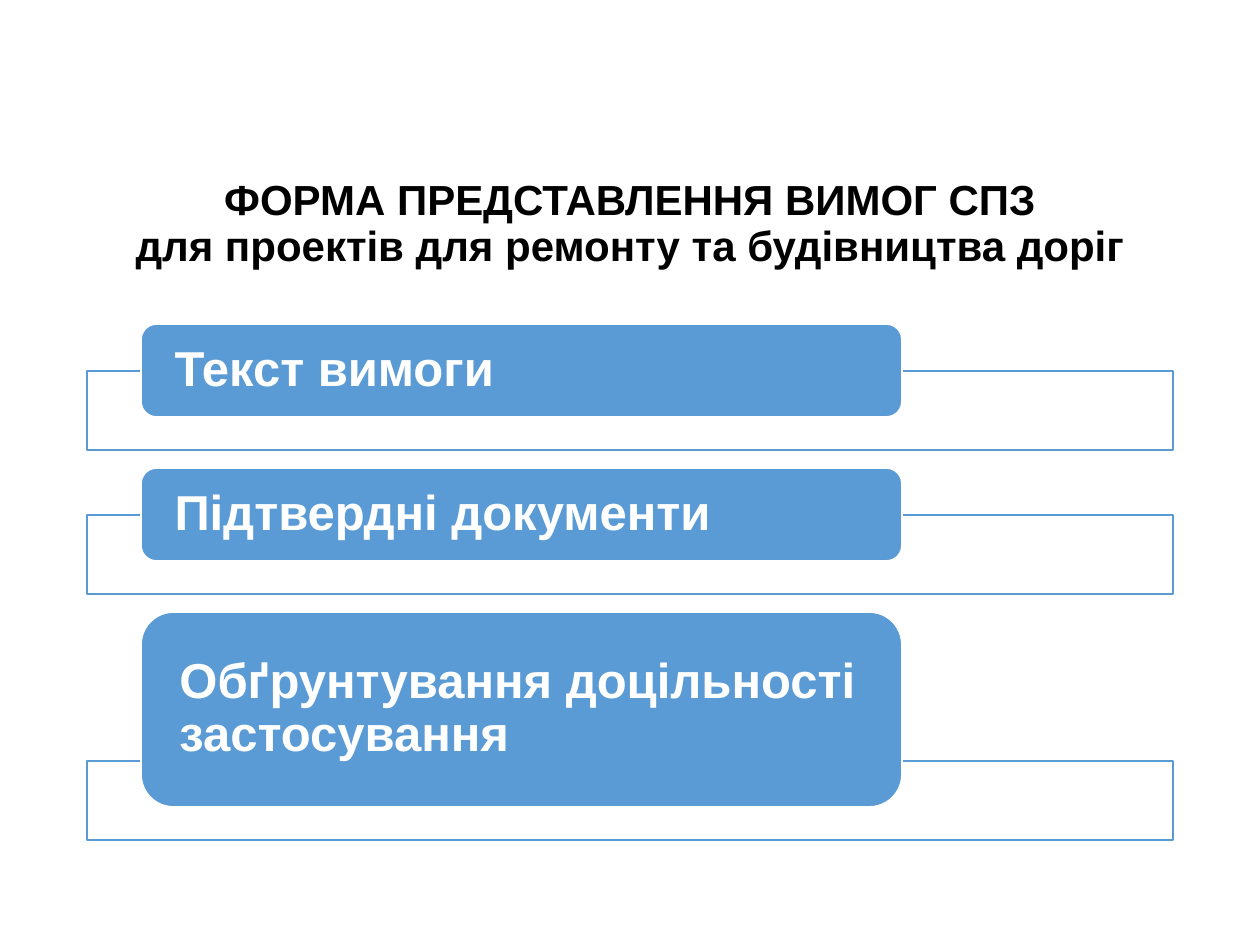
from pptx import Presentation
from pptx.dml.color import RGBColor
from pptx.enum.shapes import MSO_SHAPE as Shape
from pptx.enum.text import MSO_ANCHOR as Anchor, PP_ALIGN as Align
from pptx.util import Emu, Pt

EMU_PER_PX = 914400 / 126
BLUE = RGBColor(0x5B, 0x9B, 0xD5)
WHITE = RGBColor(0xFF, 0xFF, 0xFF)
BLACK = RGBColor(0x00, 0x00, 0x00)

TITLE = "ФОРМА ПРЕДСТАВЛЕННЯ ВИМОГ СПЗ\vдля проектів для ремонту та будівництва доріг"
# Label text and label height
SECTIONS = [
    ("Текст вимоги", 93),
    ("Підтвердні документи", 93),
    ("Обґрунтування доцільності застосування", 195),
]
LEFT, WIDTH = 87, 1086
LABEL_LEFT, LABEL_WIDTH = 141, 761
FIRST_TOP, FRAME_HEIGHT, OVERLAP, GAP = 324, 79, 46, 18


def px(length):
    return Emu(round(length * EMU_PER_PX))


class SlideBuilder:
    font = "Arial"
    line_spacing = 0.9

    def __init__(self, slide):
        self.slide = slide

    def set_text(self, shape, text, size, color, align, inset=0):
        text_frame = shape.text_frame
        text_frame.word_wrap = True
        text_frame.vertical_anchor = Anchor.MIDDLE
        text_frame.margin_left = text_frame.margin_right = px(inset)
        text_frame.margin_top = text_frame.margin_bottom = 0
        text_frame.text = text
        paragraph = text_frame.paragraphs[0]
        paragraph.alignment = align
        paragraph.line_spacing = self.line_spacing
        for run in paragraph.runs:
            run.font.name = self.font
            run.font.size = Pt(size)
            run.font.bold = True
            run.font.color.rgb = color

    def title(self, text, left, top, width, height):
        box = self.slide.shapes.add_textbox(px(left), px(top), px(width), px(height))
        self.set_text(box, text, 24, BLACK, Align.CENTER)

    def box(self, kind, left, top, width, height, fill, line):
        shape = self.slide.shapes.add_shape(kind, px(left), px(top), px(width), px(height))
        shape.shadow.inherit = False
        shape.fill.solid()
        shape.fill.fore_color.rgb = fill
        shape.line.color.rgb = line
        shape.line.width = Pt(1)
        return shape

    def section(self, text, top, label_height):
        """Draw a frame with its label on the top edge; return the frame's bottom."""
        frame_top = top + label_height - OVERLAP
        self.box(Shape.RECTANGLE, LEFT, frame_top, WIDTH, FRAME_HEIGHT, WHITE, BLUE)
        label = self.box(Shape.ROUNDED_RECTANGLE, LABEL_LEFT, top,
                         LABEL_WIDTH, label_height, BLUE, WHITE)
        self.set_text(label, text, 28, WHITE, Align.LEFT, inset=29)
        return frame_top + FRAME_HEIGHT


def main():
    presentation = Presentation()
    presentation.slide_width = px(1260)
    presentation.slide_height = px(945)
    builder = SlideBuilder(presentation.slides.add_slide(presentation.slide_layouts[6]))
    builder.title(TITLE, LEFT, 174, WIDTH, 102)
    top = FIRST_TOP
    for text, label_height in SECTIONS:
        top = builder.section(text, top, label_height) + GAP
    presentation.save("out.pptx")


if __name__ == "__main__":
    main()
